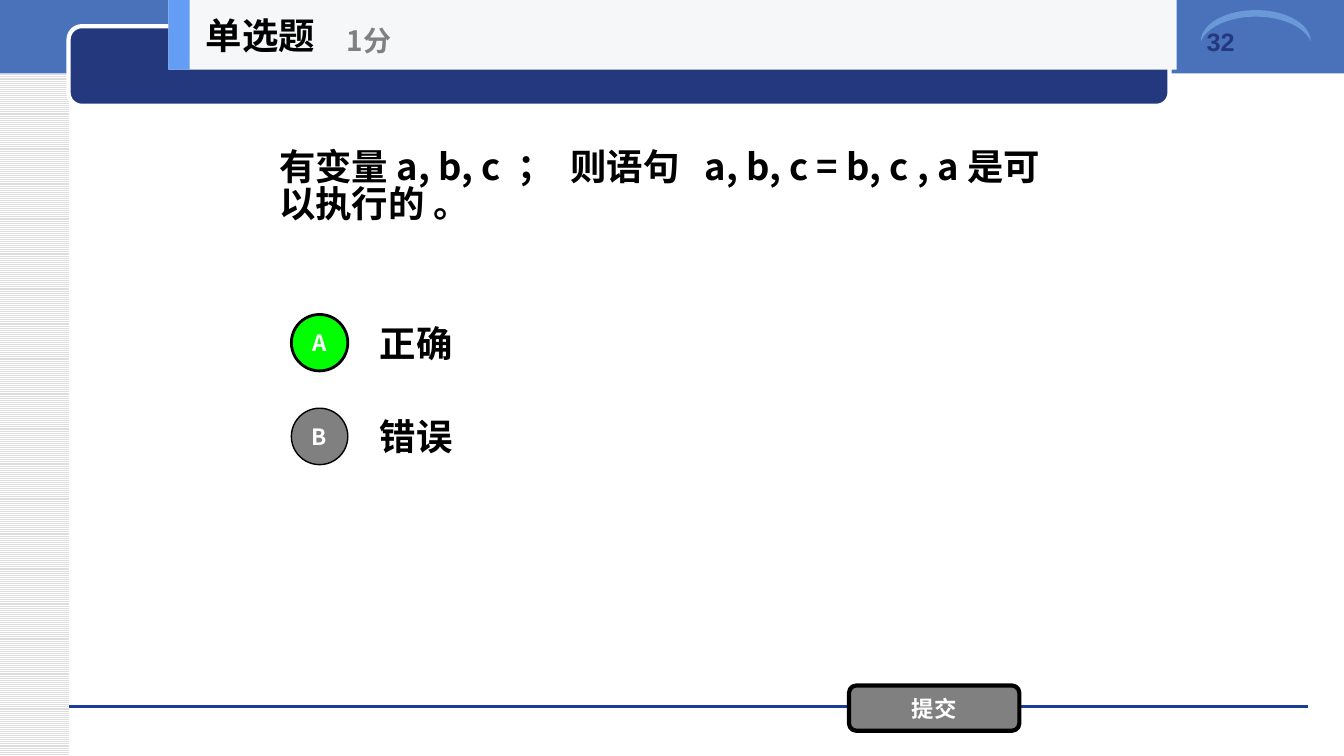
import pptx
import pptx.util
import pptx.dml.color
import pptx.enum.dml
import pptx.enum.shapes
import pptx.enum.text
import pptx.oxml.ns
import lxml.etree

Inches = pptx.util.Inches
Pt = pptx.util.Pt
SHAPE = pptx.enum.shapes.MSO_SHAPE
ALIGN = pptx.enum.text.PP_ALIGN
ANCHOR = pptx.enum.text.MSO_ANCHOR

HAN_FONT = "Noto Sans CJK SC"
COLORS = {
    "band": "4972BB", "navy": "23387D", "arc": "6A99D8", "rule": "1A3D97",
    "stripe": "DDDDDD", "white": "FFFFFF", "black": "000000",
    "green": "00FF00", "grey": "808080", "strip": "F6F7F8", "accent": "639EF4",
}


def color(name):
    return pptx.dml.color.RGBColor.from_string(COLORS[name])


def add_span(frame, text, size, shade, align=ALIGN.LEFT, font=HAN_FONT):
    """Put one bold run in the first paragraph of a text frame."""
    para = frame.paragraphs[0]
    para.alignment = align
    span = para.add_run()
    span.text = text
    span.font.name = font
    span.font.size = Pt(size)
    span.font.bold = True
    span.font.color.rgb = color(shade)
    east_asian = lxml.etree.SubElement(span.font._element, pptx.oxml.ns.qn("a:ea"))
    east_asian.set("typeface", font)
    return para


def add_block(page, kind, place, fill, line=None, width=1):
    block = page.shapes.add_shape(kind, *map(Inches, place))
    block.shadow.inherit = False
    block.fill.solid()
    block.fill.fore_color.rgb = color(fill)
    if line:
        block.line.color.rgb = color(line)
        block.line.width = Pt(width)
    else:
        block.line.fill.background()
    return block


def add_button(page, kind, place, fill, text, width):
    button = add_block(page, kind, place, fill, "black", width)
    frame = button.text_frame
    frame.margin_left = frame.margin_right = 0
    frame.margin_top = frame.margin_bottom = 0
    frame.vertical_anchor = ANCHOR.MIDDLE
    add_span(frame, text, 16, "white", ALIGN.CENTER)


def add_label(page, place, text, size, shade, anchor=ANCHOR.MIDDLE,
              wrap=True, font=HAN_FONT):
    box = page.shapes.add_textbox(*map(Inches, place))
    box.text_frame.word_wrap = wrap
    box.text_frame.vertical_anchor = anchor
    return add_span(box.text_frame, text, size, shade, font=font)


def add_rule(page, left, right, top):
    rule = page.shapes.add_connector(
        pptx.enum.shapes.MSO_CONNECTOR.STRAIGHT,
        Inches(left), Inches(top), Inches(right), Inches(top))
    rule.line.color.rgb = color("rule")
    rule.line.width = Pt(0)
    lxml.etree.SubElement(rule._element.spPr, pptx.oxml.ns.qn("a:effectLst"))


def add_background(page):
    margin = add_block(page, SHAPE.RECTANGLE, (0, 0, 0.68, 7.5), "white")
    margin.fill.patterned()
    margin.fill.pattern = pptx.enum.dml.MSO_PATTERN.LIGHT_HORIZONTAL
    margin.fill.fore_color.rgb = color("stripe")
    margin.fill.back_color.rgb = color("white")
    add_block(page, SHAPE.RECTANGLE, (0, -0.03, 13.33, 0.76), "band")
    add_rule(page, 0.68, 12.97, 7.01)
    add_block(page, SHAPE.ROUNDED_RECTANGLE, (0.68, 0.26, 10.92, 0.79),
              "navy", "white", 3)
    arc = add_block(page, SHAPE.MOON, (12.3, -0.29, 0.31, 1.09), "arc")
    arc.adjustments[0] = 0.21
    arc.rotation = 90


def place_title(page, place, text):
    title = page.shapes.title
    title.left, title.top, title.width, title.height = map(Inches, place)
    frame = title.text_frame
    frame.auto_size = pptx.enum.text.MSO_AUTO_SIZE.NONE
    frame.word_wrap = False
    frame.vertical_anchor = ANCHOR.MIDDLE
    add_span(frame, text, 26, "black")
    # Bring the title in front of the heading strip
    page.shapes.element.append(title.element)


def main():
    deck = pptx.Presentation()
    deck.slide_width, deck.slide_height = Inches(13.33), Inches(7.5)
    page = deck.slides.add_slide(deck.slide_layouts.get_by_name("Title Only"))

    add_background(page)
    add_label(page, (11.87, 0.21, 1.21, 0.71), "32", 18, "navy",
              ANCHOR.TOP, font="Arial")

    # Question
    question = add_label(
        page, (2.67, 0.69, 8, 2.34),
        "有变量 a, b, c  ；  则语句   a, b, c = b, c , a 是可以执行的 。",
        26, "black")
    question.line_spacing = 0.85

    # Answers, the right one in green
    answers = [("A", "正确", "green", 2), ("B", "错误", "grey", 1)]
    for row, (letter, answer, fill, width) in enumerate(answers):
        top = 3.05 + 0.93 * row
        add_label(page, (3.67, top, 7, 0.7), answer, 26, "black")
        add_button(page, SHAPE.OVAL, (2.89, top + 0.07, 0.56, 0.56),
                   fill, letter, width)
    add_button(page, SHAPE.ROUNDED_RECTANGLE, (8.42, 6.8, 1.69, 0.45),
               "grey", "提交", 3)

    # Heading strip
    add_block(page, SHAPE.RECTANGLE, (1.67, 0, 10, 0.69), "strip")
    add_block(page, SHAPE.RECTANGLE, (1.67, 0, 0.21, 0.69), "accent")
    place_title(page, (1.94, 0, 2.08, 0.69), "单选题")
    add_label(page, (3.34, 0.12, 2.5, 0.56), "1分", 20, "grey", wrap=False)

    deck.save("out.pptx")


if __name__ == "__main__":
    main()
